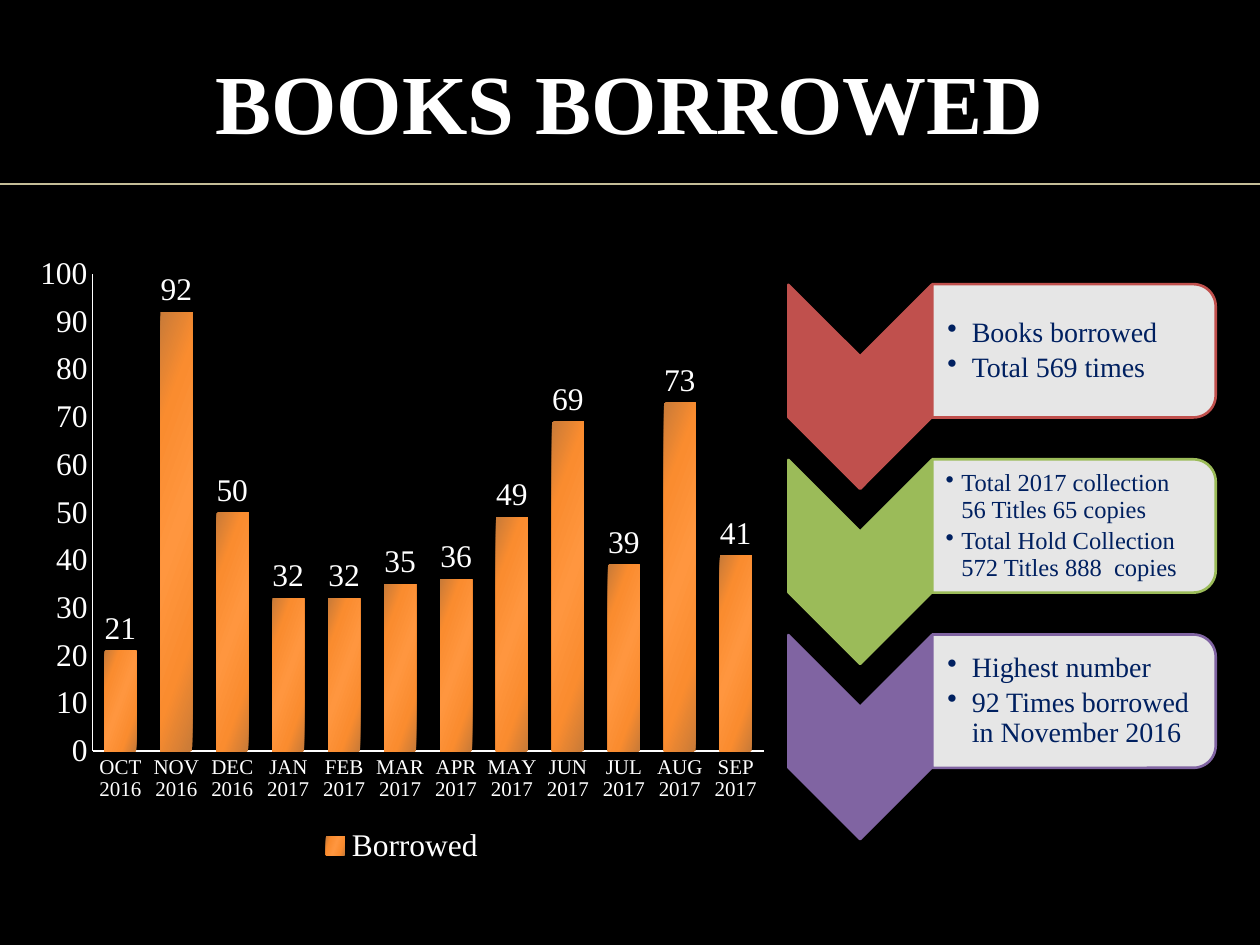
"""Builds the slide on books borrowed: a column chart beside three chevron notes."""
from lxml import etree
from pptx import Presentation
from pptx import util as u
from pptx.chart import data
from pptx.dml import color
from pptx.enum import chart as ch, shapes, text
from pptx.oxml import ns

Pt = u.Pt
FONT = "Times New Roman"
HEX = {"back": "000000", "white": "FFFFFF", "rule": "C4BD97", "card": "E6E6E6",
       "navy": "002060", "red": "C0504D", "green": "9BBB59", "plum": "8064A2"}
SHADES = [(0, "C87A38"), (22, "FA8C2F"), (50, "FF963F"), (78, "FA8C2F"), (100, "C87A38")]
NOTES = [
    ("red", 16, 14, [["Books borrowed"], ["Total 569 times"]]),
    ("green", 14, 9, [["Total 2017 collection", "56 Titles 65 copies"],
                      ["Total Hold Collection", "572 Titles 888  copies"]]),
    ("plum", 16, 14, [["Highest number"], ["92 Times borrowed in November 2016"]]),
]
MONTHS = ["OCT 2016", "NOV 2016", "DEC 2016", "JAN 2017", "FEB 2017", "MAR 2017",
          "APR 2017", "MAY 2017", "JUN 2017", "JUL 2017", "AUG 2017", "SEP 2017"]
LOANS = [21, 92, 50, 32, 32, 35, 36, 49, 69, 39, 73, 41]


def rgb(name):
    return color.RGBColor.from_string(HEX[name])


def style(font, size, name):
    font.name, font.size = FONT, Pt(size)
    font.color.rgb = rgb(name)


deck = Presentation()
deck.slide_width, deck.slide_height = Pt(720), Pt(540)
slide = deck.slides.add_slide(deck.slide_layouts[5])
slide.background.fill.solid()
slide.background.fill.fore_color.rgb = rgb("back")

rule = slide.shapes.add_connector(shapes.MSO_CONNECTOR.STRAIGHT, 0, Pt(105), Pt(720), Pt(105))
rule.line.color.rgb = rgb("rule")
rule.line.width = Pt(1)
etree.SubElement(rule.line._get_or_add_ln().getparent(), ns.qn("a:effectLst"))

title = slide.shapes.title
title.left, title.top, title.width, title.height = Pt(14), Pt(21), Pt(692), Pt(73.5)
title.text_frame.vertical_anchor = text.MSO_ANCHOR.MIDDLE
para = title.text_frame.paragraphs[0]
para.alignment = text.PP_ALIGN.CENTER
para.space_before = Pt(4)
run = para.add_run()
run.text = "BOOKS BORROWED"
style(run.font, 48, "white")
run.font.bold = True

for row, (hue, size, dent, items) in enumerate(NOTES):
    top = 162.5 + 100.1 * row
    parts = [
        (shapes.MSO_SHAPE.CHEVRON, 491.5, 58.5, 116.6, 82, hue),
        (shapes.MSO_SHAPE.ROUND_2_SAME_RECTANGLE, 613.7, 38, 76.2, 162, "card"),
    ]
    for kind, mid, drop, wide, high, fill in parts:
        shape = slide.shapes.add_shape(kind, Pt(mid - wide / 2), Pt(top + drop - high / 2),
                                       Pt(wide), Pt(high))
        shape.rotation = 90
        shape.shadow.inherit = False
        shape.fill.solid()
        shape.fill.fore_color.rgb = rgb(fill)
        shape.line.color.rgb = rgb(hue)
        shape.line.width = Pt(1.5)

    box = slide.shapes.add_textbox(Pt(532.8), Pt(top + 3.8), Pt(158.4), Pt(68.4))
    frame = box.text_frame
    frame.word_wrap = True
    frame.vertical_anchor = text.MSO_ANCHOR.MIDDLE
    frame.margin_left = Pt(size / 2 + 0.6)
    frame.margin_top = frame.margin_right = frame.margin_bottom = Pt(0.7)
    for spot, lines in enumerate(items):
        para = frame.add_paragraph() if spot else frame.paragraphs[0]
        para.line_spacing = 0.9
        para.space_after = Pt(2.8)
        props = para._p.get_or_add_pPr()
        props.set("marL", str(Pt(dent)))
        props.set("indent", str(-Pt(dent)))
        etree.SubElement(props, ns.qn("a:buChar"), char="•")
        for part, words in enumerate(lines):
            if part:
                para.add_line_break()
            run = para.add_run()
            run.text = words
            style(run.font, size, "navy")

stats = data.CategoryChartData()
stats.categories = MONTHS
stats.add_series("Borrowed", LOANS)
chart = slide.shapes.add_chart(ch.XL_CHART_TYPE.COLUMN_CLUSTERED, Pt(14.4), Pt(139.7),
                               Pt(430.6), Pt(357), stats).chart
style(chart.font, 18, "white")
chart.has_title = False
chart.has_legend = True
chart.legend.position = ch.XL_LEGEND_POSITION.BOTTOM
chart.legend.include_in_layout = False
style(chart.legend.font, 18, "white")

for axis, size in ((chart.category_axis, 12), (chart.value_axis, 18)):
    axis.has_major_gridlines = False
    axis.major_tick_mark = axis.minor_tick_mark = ch.XL_TICK_MARK.NONE
    axis.format.line.color.rgb = rgb("white")
    axis.format.line.width = Pt(0.75)
    style(axis.tick_labels.font, size, "white")
chart.value_axis.minimum_scale = 0
chart.value_axis.maximum_scale = 100
chart.value_axis.major_unit = 10

plot = chart.plots[0]
plot.gap_width = 75
plot.vary_by_categories = False
plot.has_data_labels = True
plot.data_labels.show_value = True
plot.data_labels.position = ch.XL_LABEL_POSITION.OUTSIDE_END
style(plot.data_labels.font, 18, "white")

bars = plot.series[0]
bars.invert_if_negative = False
bars.format.fill.gradient()
bars.format.fill.gradient_angle = 340
stops = bars._element.find(".//" + ns.qn("a:gsLst"))
for old in list(stops):
    stops.remove(old)
for place, shade in SHADES:
    stop = etree.SubElement(stops, ns.qn("a:gs"), pos=str(place * 1000))
    etree.SubElement(stop, ns.qn("a:srgbClr"), val=shade)

deck.save("out.pptx")
